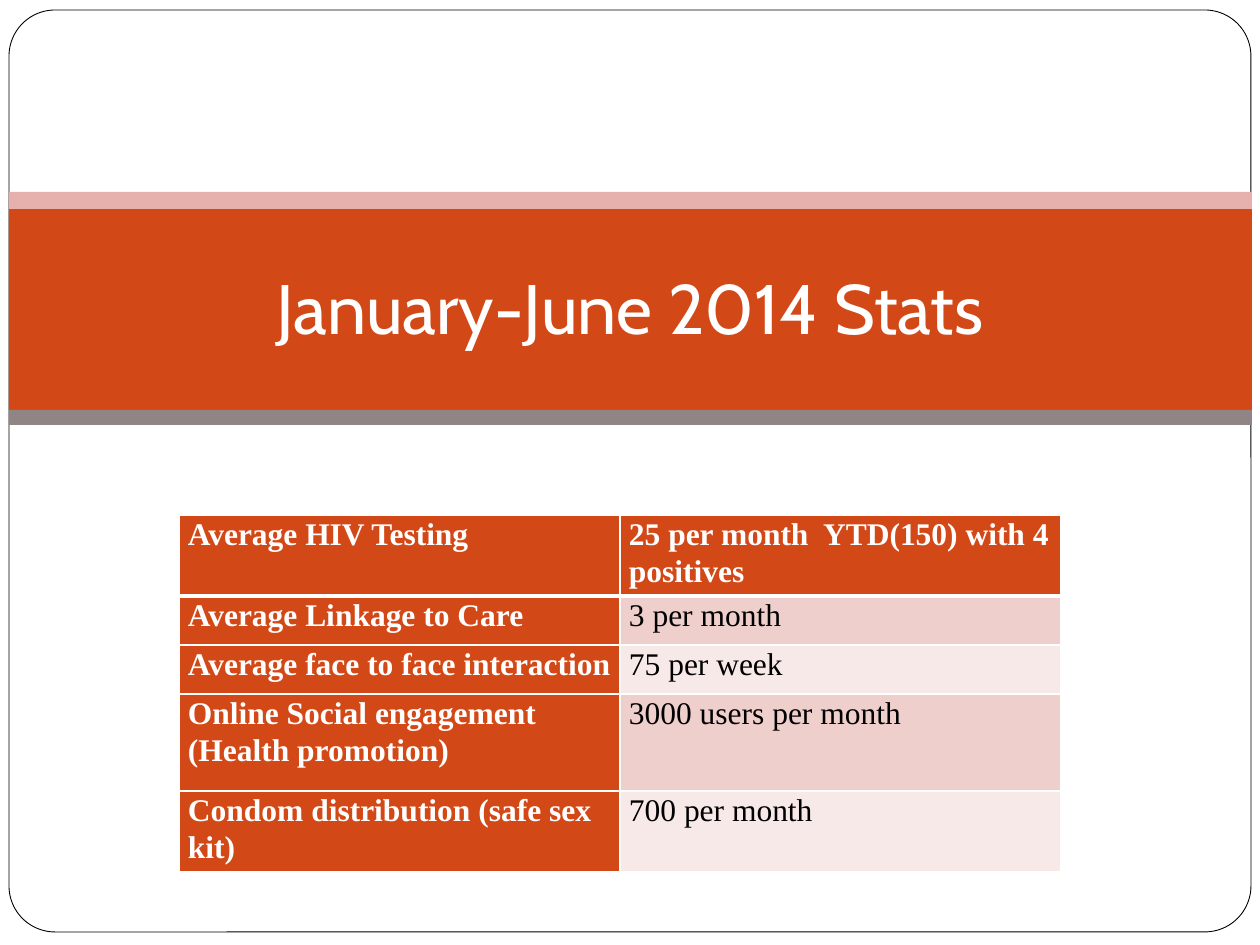
from lxml import etree
from pptx import Presentation
from pptx import util as u
from pptx.dml.color import RGBColor
from pptx.enum import shapes, text
from pptx.oxml.ns import qn

PX = 914400 / 126  # EMU per px
WHITE, BLACK, ORANGE = "FFFFFF", "000000", "D34817"
PINK, GREY = "E6B1AC", "918485"
ROW_TINTS = ["F7E9E8", "EFCFCC"]  # even and odd body rows

TITLE = "January-June 2014 Stats"
STATS = [
    ("Average HIV Testing", "25 per month  YTD(150) with 4 positives"),
    ("Average Linkage to Care", "3 per month"),
    ("Average face to face interaction", "75 per week"),
    ("Online Social engagement (Health promotion)", "3000 users per month"),
    ("Condom distribution (safe sex kit)", "700 per month"),
]
ROW_HEIGHTS = [49, 49, 49, 97, 49]
COL_WIDTH = 441


def px(n):
    return u.Emu(round(n * PX))


def rgb(value):
    return RGBColor.from_string(value)


def set_attrs(obj, values):
    for name, value in values.items():
        setattr(obj, name, value)


def write(tf, content, size, font, color, bold=False, frame=None, para=None):
    set_attrs(tf, {"word_wrap": True, **(frame or {})})
    p = tf.paragraphs[0]
    set_attrs(p, para or {})
    r = p.add_run()
    r.text = content
    set_attrs(r.font, {"size": u.Pt(size), "name": font, "bold": bold})
    r.font.color.rgb = rgb(color)


def add_block(s, kind, box, fill, line=None):
    sp = s.shapes.add_shape(kind, *map(px, box))
    sp.shadow.inherit = False
    sp.fill.solid()
    sp.fill.fore_color.rgb = rgb(fill)
    if line:
        sp.line.color.rgb = rgb(line)
        sp.line.width = u.Pt(0.5)
    else:
        sp.line.fill.background()
    return sp


def add_title(s, box):
    sp = s.shapes.add_textbox(*map(px, box))
    write(sp.text_frame, TITLE, 40, "Cabin", WHITE,
          frame={"vertical_anchor": text.MSO_ANCHOR.MIDDLE,
                 "margin_bottom": u.Inches(0.1)},
          para={"alignment": text.PP_ALIGN.CENTER})


def set_borders(cell, widths):
    tc_pr = cell._tc.get_or_add_tcPr()
    for i, (side, width) in enumerate(widths.items()):
        ln = etree.Element(qn(f"a:ln{side}"), w=str(u.Pt(width)))
        fill = etree.SubElement(ln, qn("a:solidFill"))
        etree.SubElement(fill, qn("a:srgbClr"), val=WHITE)
        tc_pr.insert(i, ln)  # borders come before the fill


def add_stats(s, left, top):
    frame = s.shapes.add_table(len(STATS), 2, px(left), px(top),
                               px(2 * COL_WIDTH), px(sum(ROW_HEIGHTS)))
    table = frame.table
    for col in table.columns:
        col.width = px(COL_WIDTH)
    for i, (values, height) in enumerate(zip(STATS, ROW_HEIGHTS)):
        table.rows[i].height = px(height)
        for j, value in enumerate(values):
            head = i == 0 or j == 0
            cell = table.cell(i, j)
            set_attrs(cell, {"margin_left": px(9), "margin_right": px(9),
                             "margin_top": 0, "margin_bottom": 0})
            cell.fill.solid()
            cell.fill.fore_color.rgb = rgb(ORANGE if head else ROW_TINTS[i % 2])
            write(cell.text_frame, value, 18, "Times New Roman",
                  WHITE if head else BLACK, head, para={"line_spacing": 1.07})
            # A thick rule parts the first row from the rest
            set_borders(cell, {"L": 1, "R": 1, "T": 3 if i == 1 else 1,
                               "B": 3 if i == 0 else 1})


def main():
    prs = Presentation()
    prs.slide_width, prs.slide_height = px(1260), px(945)
    s = prs.slides.add_slide(prs.slide_layouts[6])

    # Rounded frame
    kind = shapes.MSO_SHAPE
    page = add_block(s, kind.ROUNDED_RECTANGLE, (9, 10, 1242, 922), WHITE, BLACK)
    page.adjustments[0] = 0.05

    # Title band with a stripe above and below
    for top, height, fill in [(199, 211, ORANGE), (192, 17, PINK), (410, 15, GREY)]:
        add_block(s, kind.RECTANGLE, (9, top, 1243, height), fill)
    add_title(s, (63, 208, 1134, 203))

    # Statistics
    add_stats(s, 179, 515)
    prs.save("out.pptx")


if __name__ == "__main__":
    main()
